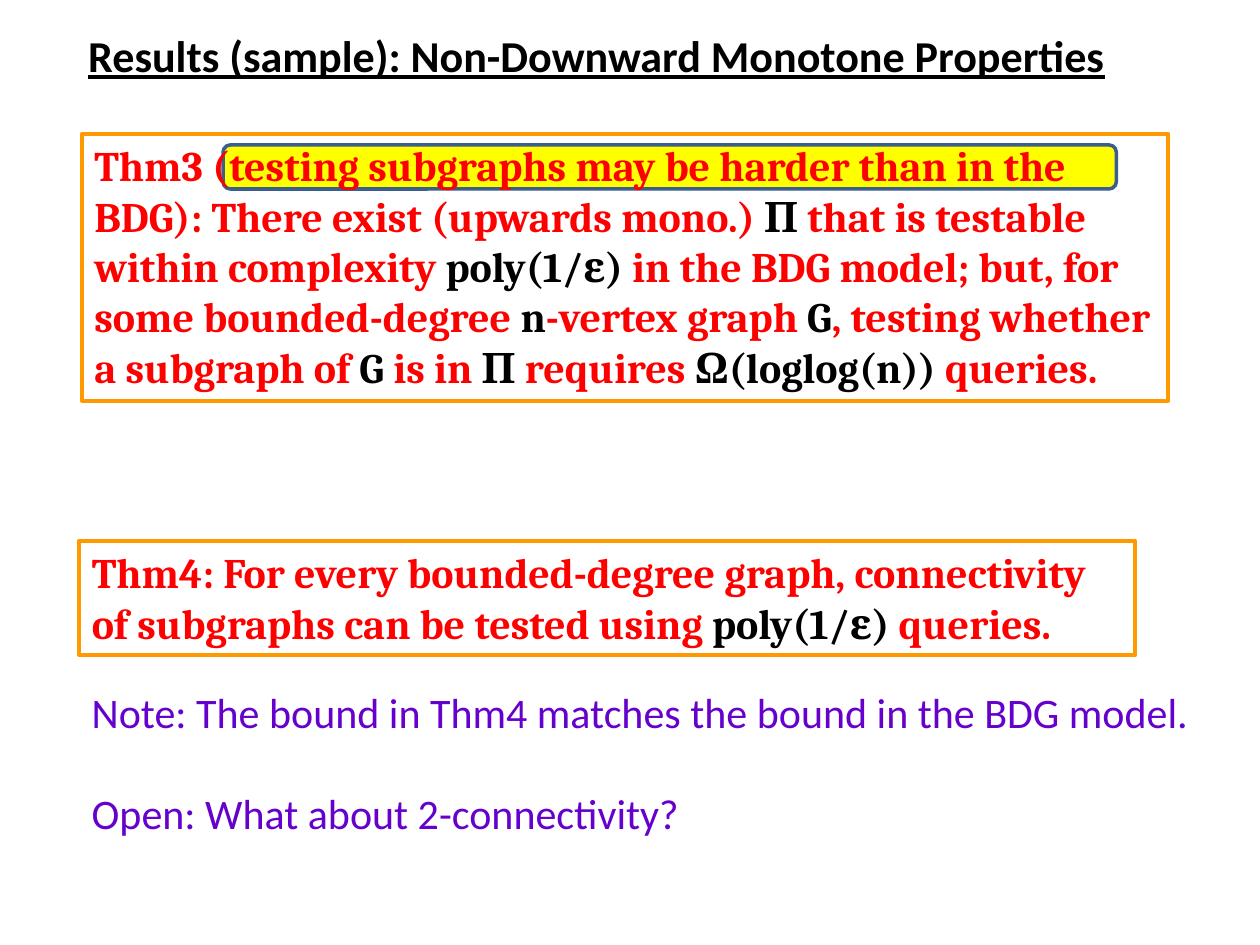
from dataclasses import dataclass

from pptx import Presentation
from pptx.dml.color import RGBColor
from pptx.enum.shapes import MSO_SHAPE
from pptx.enum.text import MSO_ANCHOR, MSO_AUTO_SIZE, PP_ALIGN
from pptx.util import Inches, Pt

COLS, ROWS = 100, 75


@dataclass(frozen=True)
class Theme:
    ink: RGBColor = RGBColor(0, 0, 0)
    claim: RGBColor = RGBColor(255, 0, 0)
    note: RGBColor = RGBColor(0x66, 0, 0xCC)
    frame: RGBColor = RGBColor(255, 0x99, 0)
    mark: RGBColor = RGBColor(255, 255, 0)
    edge: RGBColor = RGBColor(0x3A, 0x5F, 0x8C)
    sans: str = "Calibri"
    serif: str = "Cambria"
    head: float = 25.2
    body: float = 24
    gap: float = 29


class Page:
    def __init__(self, deck, theme):
        self.deck, self.theme = deck, theme
        self.slide = deck.slides.add_slide(deck.slide_layouts[5])

    def area(self, col, row, wide, high):
        """Turn grid cells into slide lengths."""
        x = self.deck.slide_width / COLS
        y = self.deck.slide_height / ROWS
        return [round(n) for n in (col * x, row * y, wide * x, high * y)]

    def style(self, run, face, size, color, bold=False):
        font = run.font
        font.name, font.size, font.bold = face, Pt(size), bold
        font.color.rgb = color

    def title(self, text, *cells):
        shape = self.slide.shapes.title
        shape.left, shape.top, shape.width, shape.height = self.area(*cells)
        frame = shape.text_frame
        frame.text = text
        frame.vertical_anchor = MSO_ANCHOR.MIDDLE
        para = frame.paragraphs[0]
        para.alignment = PP_ALIGN.LEFT
        run = para.runs[0]
        self.style(run, self.theme.sans, self.theme.head, self.theme.ink, True)
        run.font.underline = True

    def mark(self, *cells):
        shape = self.slide.shapes.add_shape(
            MSO_SHAPE.ROUNDED_RECTANGLE, *self.area(*cells))
        shape.shadow.inherit = False
        shape.fill.solid()
        shape.fill.fore_color.rgb = self.theme.mark
        shape.line.color.rgb = self.theme.edge
        shape.line.width = Pt(2)

    def box(self, *cells):
        shape = self.slide.shapes.add_textbox(*self.area(*cells))
        shape.text_frame.word_wrap = True
        shape.text_frame.auto_size = MSO_AUTO_SIZE.SHAPE_TO_FIT_TEXT
        return shape

    def claim(self, text, *cells):
        """Add a framed theorem; parts between bars are formulas in ink."""
        shape = self.box(*cells)
        shape.line.color.rgb = self.theme.frame
        shape.line.width = Pt(2.25)
        para = shape.text_frame.paragraphs[0]
        for i, part in enumerate(text.split("|")):
            run = para.add_run()
            run.text = part
            color = self.theme.ink if i % 2 else self.theme.claim
            self.style(run, self.theme.serif, self.theme.body, color, True)

    def notes(self, lines, *cells):
        frame = self.box(*cells).text_frame
        frame.text = "\n".join(lines)
        for i, para in enumerate(frame.paragraphs):
            para.space_before = Pt(self.theme.gap if i else 0)
            self.style(para.runs[0], self.theme.sans, self.theme.body,
                       self.theme.note)


def main():
    deck = Presentation()
    deck.slide_width, deck.slide_height = Inches(10), Inches(7.5)
    page = Page(deck, Theme())
    page.mark(17.7, 11.5, 70.9, 3.5)
    page.title("Results (sample): Non-Downward Monotone Properties",
               6, 1.9, 85.7, 4.9)
    page.claim("Thm3 (testing subgraphs may be harder than in the BDG): "
               "There exist (upwards mono.) |Π| that is testable within "
               "complexity |poly(1/ε)| in the BDG model; but, for some "
               "bounded-degree |n|-vertex graph |G|, testing whether a "
               "subgraph of |G| is in |Π| requires |Ω(loglog(n)) |queries.",
               6.5, 10.6, 86.2, 21.2)
    page.claim("Thm4: For every bounded-degree graph, connectivity of "
               "subgraphs can be tested using |poly(1/ε)| queries.",
               6.3, 42.9, 83.8, 9.1)
    page.notes(["Note: The bound in Thm4 matches the bound in the BDG model.",
                "Open: What about 2-connectivity?"],
               6.3, 54, 89.4, 13.1)
    deck.save("out.pptx")


if __name__ == "__main__":
    main()
